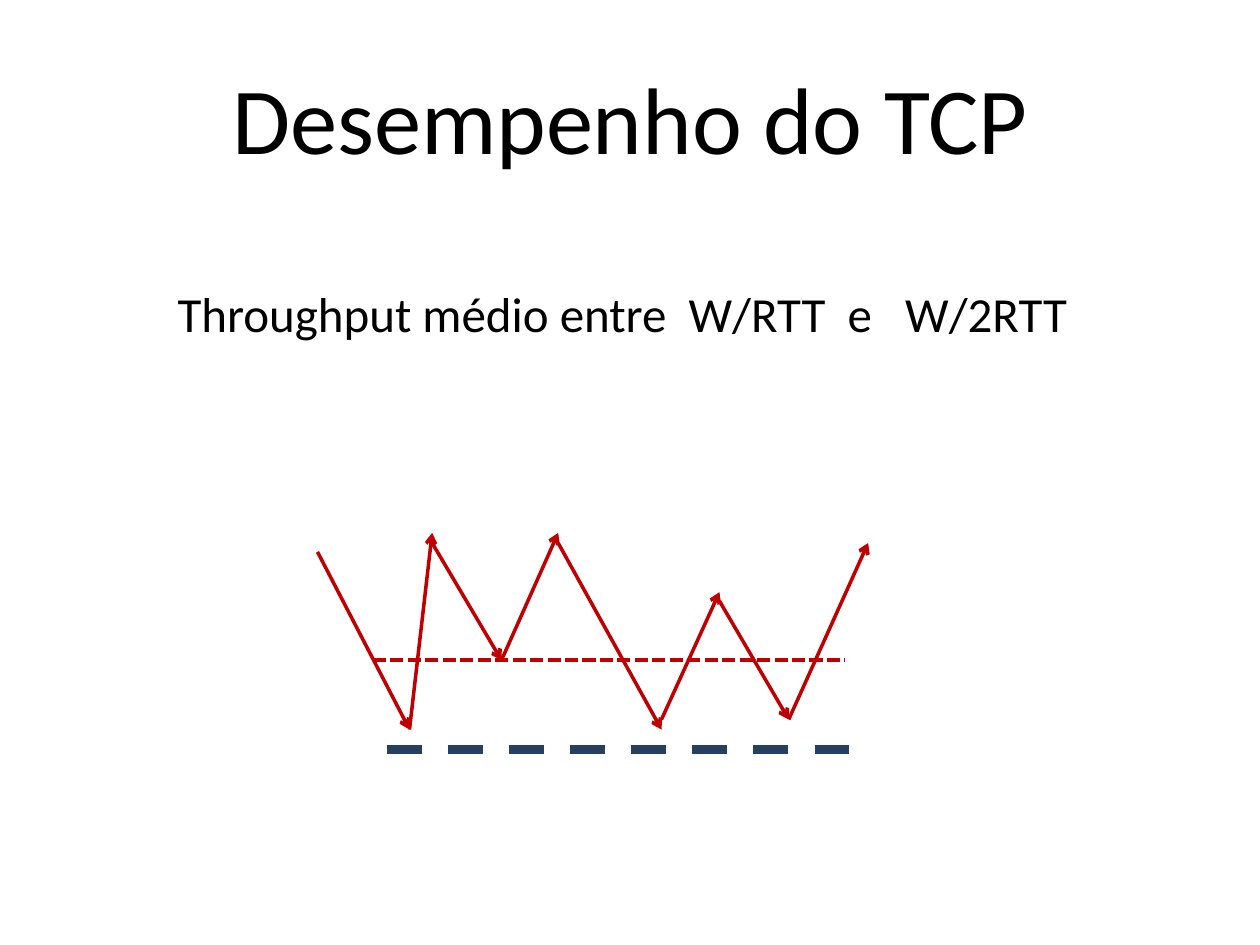
from lxml import etree
from pptx import Presentation
from pptx.dml.color import RGBColor
from pptx.enum import dml, shapes, text
from pptx.oxml import ns
from pptx.util import Inches, Pt

RED = RGBColor(0xC0, 0x00, 0x00)
NAVY = RGBColor(0x25, 0x40, 0x61)
BLACK = RGBColor(0x00, 0x00, 0x00)

# Content: text, box, size, paragraph and frame formats
TITLE = ("Desempenho do TCP", (0.5, 0.3, 9, 1.25), 54,
         {"alignment": text.PP_ALIGN.CENTER},
         {"vertical_anchor": text.MSO_ANCHOR.MIDDLE})
BODY = ("Throughput médio entre  W/RTT  e   W/2RTT", (1.31, 2.2, 7.89, 0.75), 28,
        {"alignment": text.PP_ALIGN.LEFT},
        {"vertical_anchor": text.MSO_ANCHOR.TOP})

# Window size over time: x of each turn, y where a stroke ends and the next starts
TURNS = [(2.52, 4.38, 4.38), (3.25, 5.79, 5.79), (3.43, 4.23, 4.31),
         (3.98, 5.24, 5.24), (4.43, 4.23, 4.31), (5.25, 5.79, 5.71),
         (5.71, 4.7, 4.77), (6.26, 5.71, 5.71), (6.89, 4.31, 4.31)]

# Level lines: left, right, y, format, colour
AXIS = (3.07, 6.89, 5.95,
        {"width": Pt(5), "dash_style": dml.MSO_LINE.DASH}, NAVY)
MEAN = (2.96, 6.71, 5.24,
        {"width": Pt(2.5), "dash_style": dml.MSO_LINE.SQUARE_DOT}, RED)


def apply(obj, fmt):
    for key, val in fmt.items():
        setattr(obj, key, val)


def fill_box(box, item):
    words, place, size, para, frame = item
    apply(box, dict(zip(("left", "top", "width", "height"), map(Inches, place))))
    tf = box.text_frame
    tf.text = words
    apply(tf, {"word_wrap": True, "auto_size": text.MSO_AUTO_SIZE.NONE, **frame})
    par = tf.paragraphs[0]
    apply(par, para)
    font = par.runs[0].font
    apply(font, {"size": Pt(size), "name": "Calibri"})
    font.color.rgb = BLACK
    return par


def add_line(home, start, end, fmt, color, arrow=False):
    line = home.add_connector(shapes.MSO_CONNECTOR.STRAIGHT,
                              *map(Inches, (*start, *end)))
    line.line.color.rgb = color
    apply(line.line, fmt)
    if arrow:
        etree.SubElement(line.line._get_or_add_ln(), ns.qn("a:tailEnd"), type="arrow")
    etree.SubElement(line._element.spPr, ns.qn("a:effectLst"))


prs = Presentation()
apply(prs, {"slide_width": Inches(10), "slide_height": Inches(7.5)})
slide = prs.slides.add_slide(prs.slide_layouts[1])

# Title and statement, the latter without bullet or indent
fill_box(slide.shapes.title, TITLE)
props = fill_box(slide.placeholders[1], BODY)._p.get_or_add_pPr()
for key in ("marL", "indent"):
    props.set(key, "0")
etree.SubElement(props, ns.qn("a:buNone"))

# Sawtooth of arrows
saw = slide.shapes.add_group_shape().shapes
for (x1, _, y1), (x2, y2, _) in zip(TURNS, TURNS[1:]):
    add_line(saw, (x1, y1), (x2, y2), {"width": Pt(2)}, RED, arrow=True)

# Base line and mean level
for left, right, y, fmt, color in (AXIS, MEAN):
    add_line(slide.shapes, (left, y), (right, y), fmt, color)

prs.save("out.pptx")
